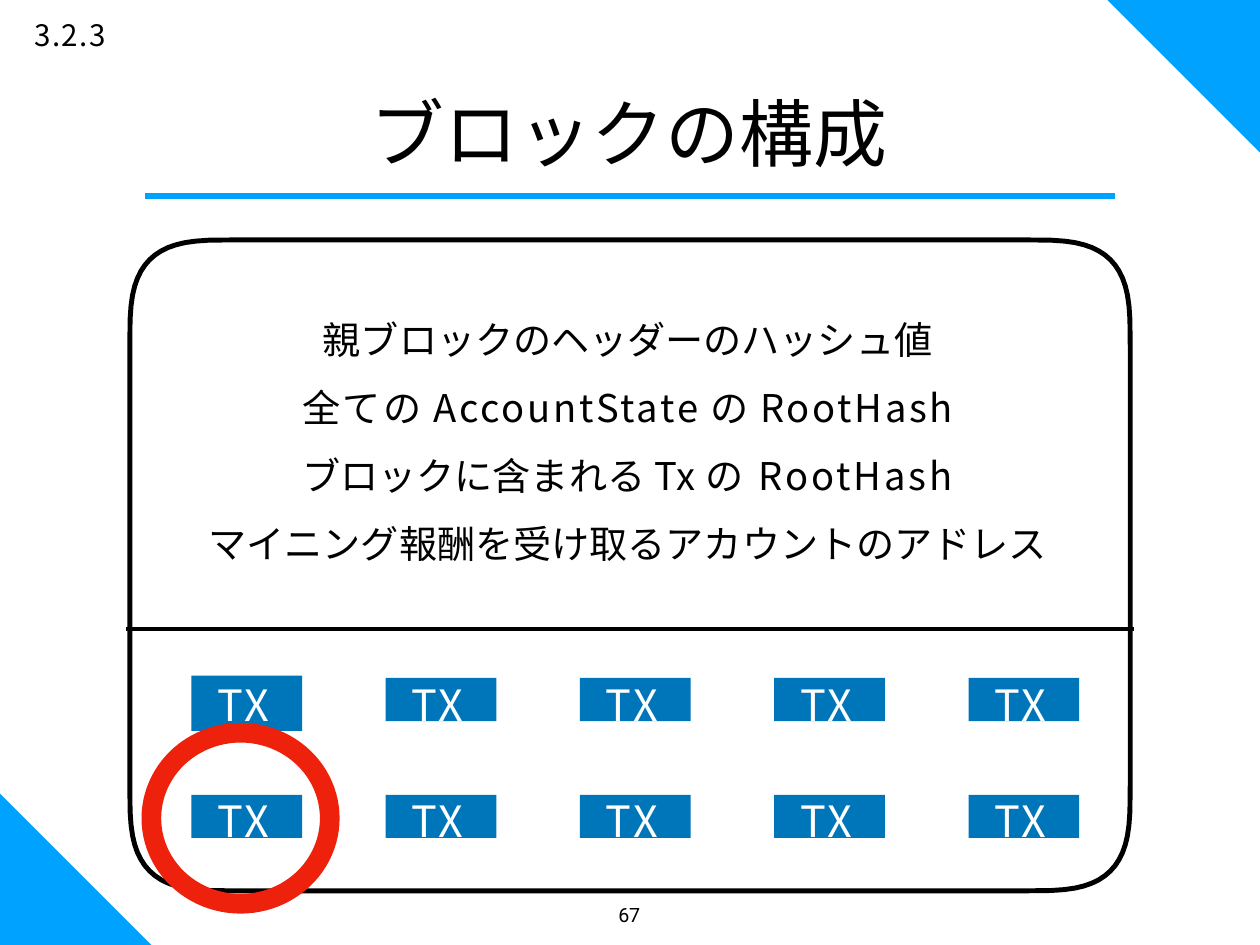
"""Builds the slide on how a block is composed."""
import math
from dataclasses import dataclass
from itertools import product
from typing import Any

import pptx
import pptx.dml.color
import pptx.enum.shapes
import pptx.enum.text
import pptx.oxml.ns
import pptx.util
from lxml import etree

Pt = pptx.util.Pt
SHAPES = pptx.enum.shapes.MSO_SHAPE
ALIGN = pptx.enum.text.PP_ALIGN
COLORS = {"accent": "00A2FF", "ink": "000000", "tx": "0076BA", "ring": "EE220C", "paper": "FFFFFF"}
CJK = "Noto Sans CJK JP"


@dataclass
class Area:
    """Position and size in points."""
    left: float
    top: float
    width: float
    height: float

    def lengths(self) -> list[int]:
        """Return the four values as slide lengths."""
        return [Pt(value) for value in (self.left, self.top, self.width, self.height)]


@dataclass
class Span:
    """Text with its letter spacing in points."""
    text: str
    spacing: float = 0


@dataclass
class Style:
    """Look of a text."""
    size: float
    color: str = "ink"
    font: str = CJK
    align: Any = ALIGN.LEFT
    pitch: float | None = None
    inset_left: float = 0
    inset_top: float = 0
    wrap: bool = False


@dataclass
class Rule:
    """Horizontal line in points."""
    left: float
    right: float
    top: float
    color: str
    weight: float


HEADER_LINES = [
    [Span("親ブロックの"), Span("ヘ", -0.9), Span("ッ"), Span("ダ", -1.9), Span("ーの"),
     Span("ハ", -0.9), Span("ッシュ値")],
    [Span("全てのAccountStateのRootHash", 2.2)],
    [Span("ブロックに含まれる"), Span("Tx", 1), Span("の", 4.2), Span("RootHash", 2.4)],
    [Span("マ"), Span("イ", -1.2), Span("ニング報酬を受け取るアカウントのアド"),
     Span("レ", -1.9), Span("ス")],
]
RULES = [Rule(118, 906.5, 159, "accent", 5), Rule(102.5, 921.5, 511, "ink", 3)]
CORNERS = [(Area(0, 645, 123, 123), 0), (Area(900, 0, 124, 124), 180)]
BLOCK = Area(105.5, 195, 813, 529)
TX_LEFT, TX_TOP, TX_STEP_X, TX_STEP_Y = 155.5, 551, 157.9, 95


def rgb(name: str) -> pptx.dml.color.RGBColor:
    """Look up a colour by name."""
    return pptx.dml.color.RGBColor.from_string(COLORS[name])


def apply(target: Any, values: dict[str, Any]) -> None:
    """Set attributes from format values."""
    for name, value in values.items():
        setattr(target, name, value)


def paint(shape: Any, fill: str | None = None, line: str | None = None, weight: float = 0) -> Any:
    """Give a shape its fill and outline."""
    shape.shadow.inherit = False
    if fill:
        shape.fill.solid()
        shape.fill.fore_color.rgb = rgb(fill)
    else:
        shape.fill.background()
    if line:
        shape.line.color.rgb = rgb(line)
        shape.line.width = Pt(weight)
    else:
        shape.line.fill.background()
    return shape


def write(box: Any, lines: list[list[Span]], style: Style) -> None:
    """Fill a box with styled lines."""
    frame = box.text_frame
    apply(frame, {
        "margin_left": Pt(style.inset_left), "margin_top": Pt(style.inset_top),
        "margin_right": 0, "margin_bottom": 0, "word_wrap": style.wrap,
        "auto_size": pptx.enum.text.MSO_AUTO_SIZE.NONE,
        "vertical_anchor": pptx.enum.text.MSO_ANCHOR.TOP,
    })
    for index, line in enumerate(lines):
        para = frame.add_paragraph() if index else frame.paragraphs[0]
        para.alignment = style.align
        if style.pitch:
            para.line_spacing = Pt(style.pitch)
        for part in line:
            span = para.add_run()
            span.text = part.text
            apply(span.font, {"size": Pt(style.size), "name": style.font, "bold": False})
            span.font.color.rgb = rgb(style.color)
            properties = span.font._element
            properties.set("spc", str(round(part.spacing * 100)))
            east_asian = etree.SubElement(properties, pptx.oxml.ns.qn("a:ea"))
            east_asian.set("typeface", style.font)


def add_text(page: Any, area: Area, lines: list[list[Span]], style: Style) -> None:
    """Add a text box."""
    write(page.shapes.add_textbox(*area.lengths()), lines, style)


def add_rule(page: Any, rule: Rule) -> None:
    """Add a horizontal line without shadow."""
    line = page.shapes.add_connector(
        pptx.enum.shapes.MSO_CONNECTOR.STRAIGHT,
        Pt(rule.left), Pt(rule.top), Pt(rule.right), Pt(rule.top))
    line.line.color.rgb = rgb(rule.color)
    line.line.width = Pt(rule.weight)
    etree.SubElement(line._element.spPr, pptx.oxml.ns.qn("a:effectLst"))


def add_block(page: Any, area: Area, radius: float = 85, power: float = 3.3, steps: int = 16) -> None:
    """Add the block outline with superellipse corners."""
    points = []
    for quarter, step in product(range(4), range(steps + 1)):
        angle = (quarter + step / steps) * math.pi / 2
        x_sign = 1 if quarter in (0, 3) else -1
        y_sign = 1 if quarter < 2 else -1
        x_reach = area.width / 2 - radius + radius * abs(math.cos(angle)) ** (2 / power)
        y_reach = area.height / 2 - radius + radius * abs(math.sin(angle)) ** (2 / power)
        points.append((Pt(area.left + area.width / 2 + x_sign * x_reach),
                       Pt(area.top + area.height / 2 + y_sign * y_reach)))
    builder = page.shapes.build_freeform(*points[0])
    builder.add_line_segments(points[1:], close=True)
    paint(builder.convert_to_shape(), line="ink", weight=4)


def add_transaction(page: Any, row: int, column: int) -> None:
    """Add one TX box; the first is taller."""
    extra = 2 if row == column == 0 else 0
    area = Area(TX_LEFT + column * TX_STEP_X, TX_TOP + row * TX_STEP_Y - extra, 90, 35 + 5 * extra)
    box = paint(page.shapes.add_shape(SHAPES.RECTANGLE, *area.lengths()), fill="tx")
    write(box, [[Span("TX", 2)]], Style(35, "paper", inset_left=21, inset_top=extra, wrap=True))


def main() -> None:
    """Build and save the deck."""
    deck = pptx.Presentation()
    apply(deck, {"slide_width": Pt(1024), "slide_height": Pt(768)})
    page = deck.slides.add_slide(deck.slide_layouts[5])
    page.background.fill.solid()
    page.background.fill.fore_color.rgb = rgb("paper")
    for area, rotation in CORNERS:
        corner = page.shapes.add_shape(SHAPES.RIGHT_TRIANGLE, *area.lengths())
        paint(corner, fill="accent").rotation = rotation
    add_block(page, BLOCK)
    for rule in RULES:
        add_rule(page, rule)
    add_text(page, Area(110, 239, 800, 222), HEADER_LINES,
             Style(31, align=ALIGN.CENTER, pitch=55.3, wrap=True))
    for row, column in product(range(2), range(5)):
        add_transaction(page, row, column)
    ring = page.shapes.add_shape(SHAPES.OVAL, *Area(123, 595.5, 145, 139).lengths())
    paint(ring, line="ring", weight=16)
    title = page.shapes.title
    apply(title, dict(zip(("left", "top", "width", "height"), Area(301, 71.5, 422, 74).lengths())))
    write(title, [[Span("ブロックの構成")]], Style(60))
    add_text(page, Area(502.5, 734, 22, 16), [[Span("67", -0.1)]], Style(16, font="Roboto"))
    add_text(page, Area(28, 13.5, 66, 24), [[Span("3.2.3", 1.2)]], Style(24))
    deck.save("out.pptx")


if __name__ == "__main__":
    main()
